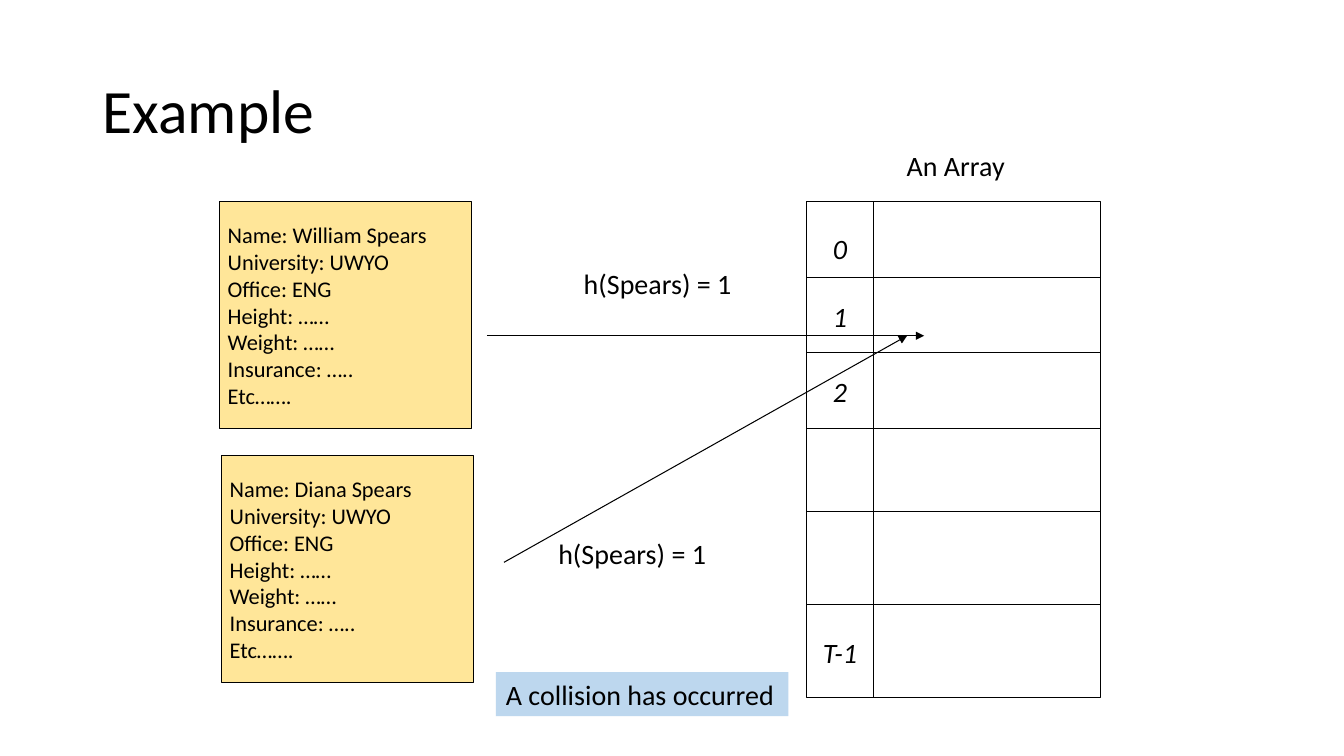
from lxml.etree import SubElement
from pptx import Presentation
from pptx.dml.color import RGBColor
from pptx.enum.shapes import MSO_CONNECTOR, MSO_SHAPE
from pptx.enum.text import MSO_ANCHOR, PP_ALIGN
from pptx.oxml.ns import qn
from pptx.util import Cm, Pt

BLACK = "000000"
ARRAY_LEFT, ARRAY_TOP, ARRAY_RIGHT, ARRAY_BOTTOM = 20.32, 5.08, 27.74, 17.58
INDEX_RIGHT = 22.02
ROW_LINES = [6.99, 8.89, 10.8, 12.9, 15.24]
INDEX_LABELS = [("0", 5.72), ("1", 7.42), ("2", 9.32), ("T-1", 15.88)]


def color(value):
    return RGBColor.from_string(value)


def write(sp, lines, size, align=PP_ALIGN.LEFT, anchor=MSO_ANCHOR.TOP,
          italic=False, wrap=False, inset=0.25):
    tf = sp.text_frame
    tf.word_wrap = wrap
    tf.vertical_anchor = anchor
    tf.margin_left = tf.margin_right = Cm(inset)
    for i, line in enumerate(lines):
        p = tf.add_paragraph() if i else tf.paragraphs[0]
        p.alignment = align
        r = p.add_run()
        r.text = line
        r.font.name = "Calibri"
        r.font.size = Pt(size)
        r.font.italic = italic
        r.font.color.rgb = color(BLACK)
    return tf


def add_text(s, x, y, w, h, text, size=20, **style):
    sp = s.shapes.add_textbox(Cm(x), Cm(y), Cm(w), Cm(h))
    return write(sp, [text], size, **style)


def add_box(s, x, y, w, h, fill=None, line=None):
    sp = s.shapes.add_shape(MSO_SHAPE.RECTANGLE, Cm(x), Cm(y), Cm(w), Cm(h))
    sp.shadow.inherit = False
    if fill:
        sp.fill.solid()
        sp.fill.fore_color.rgb = color(fill)
    else:
        sp.fill.background()
    if line:
        sp.line.color.rgb = color(line)
        sp.line.width = Pt(0.75)
    else:
        sp.line.fill.background()
    return sp


def add_line(s, x1, y1, x2, y2, arrow=False):
    cn = s.shapes.add_connector(MSO_CONNECTOR.STRAIGHT, Cm(x1), Cm(y1), Cm(x2), Cm(y2))
    cn.line.color.rgb = color(BLACK)
    cn.line.width = Pt(0.75)
    spPr = cn._element.spPr
    if arrow:
        SubElement(spPr.find(qn("a:ln")), qn("a:tailEnd"), type="triangle")
    SubElement(spPr, qn("a:effectLst"))


def add_record(s, x, y, name):
    sp = add_box(s, x, y, 6.35, 5.72, "FFE699", BLACK)
    lines = [f"Name: {name}", "University: UWYO", "Office: ENG", "Height: ……",
             "Weight: ……", "Insurance: …..", "Etc……."]
    write(sp, lines, 16, anchor=MSO_ANCHOR.MIDDLE, inset=0.2)


def add_array(s):
    add_box(s, ARRAY_LEFT, ARRAY_TOP, ARRAY_RIGHT - ARRAY_LEFT,
            ARRAY_BOTTOM - ARRAY_TOP, line=BLACK)
    for y in ROW_LINES:
        add_line(s, ARRAY_LEFT, y, ARRAY_RIGHT, y)
    add_line(s, INDEX_RIGHT, ARRAY_TOP, INDEX_RIGHT, ARRAY_BOTTOM)
    for label, y in INDEX_LABELS:
        add_text(s, ARRAY_LEFT, y, INDEX_RIGHT - ARRAY_LEFT, 1.11, label,
                 align=PP_ALIGN.CENTER, italic=True)


def main():
    prs = Presentation()
    prs.slide_width, prs.slide_height = Cm(33.87), Cm(19.05)
    s = prs.slides.add_slide(prs.slide_layouts[6])

    title = add_text(s, 2.34, 1.02, 29.21, 3.68, "Example", 44,
                     anchor=MSO_ANCHOR.MIDDLE, wrap=True)
    title.paragraphs[0].line_spacing = 0.9
    add_text(s, 22.6, 3.61, 3.02, 1.11, "An Array")

    add_record(s, 5.54, 5.08, "William Spears")
    add_record(s, 5.59, 11.48, "Diana Spears")
    add_line(s, 12.27, 8.46, 23.29, 8.46, arrow=True)
    add_line(s, 12.7, 14.17, 22.86, 8.46, arrow=True)
    for x, y in [(14.46, 6.6), (13.82, 13.39)]:
        add_text(s, x, y, 4.32, 1.11, "h(Spears) = 1")

    collision = add_box(s, 12.5, 16.94, 7.37, 1.11, "BDD7EE")
    write(collision, ["A collision has occurred"], 20)
    add_array(s)
    prs.save("out.pptx")


if __name__ == "__main__":
    main()
